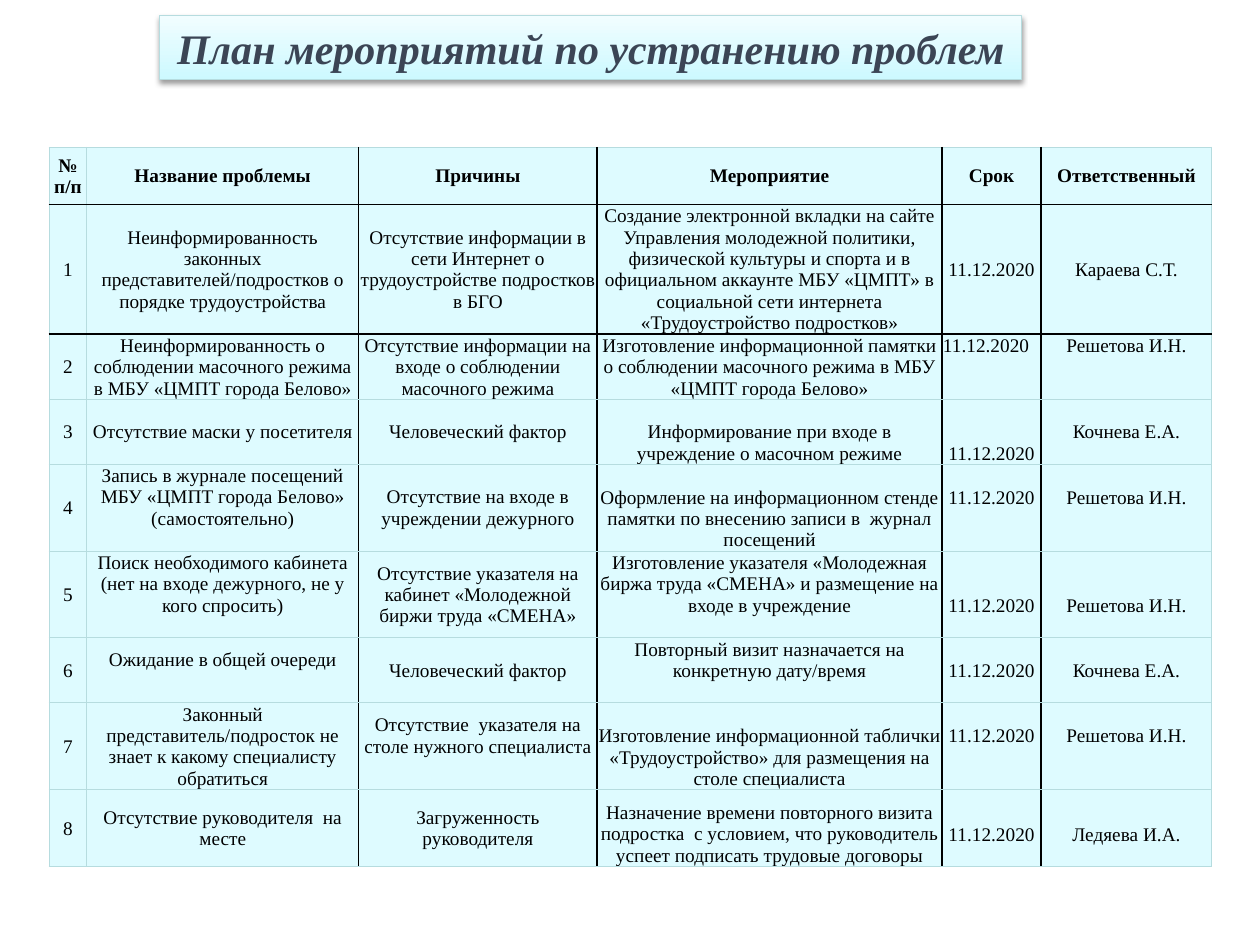
import pptx
import pptx.dml.color
import pptx.enum.shapes
import pptx.enum.text
import pptx.oxml
import pptx.oxml.ns
import pptx.util

Cm = pptx.util.Cm
Pt = pptx.util.Pt

# Content: a cell is text, or (text, anchor, free lines below)
TITLE = "План мероприятий по устранению проблем"
HEADER = ["№ п/п", "Название проблемы", "Причины", "Мероприятие", "Срок", "Ответственный"]
DATE = "11.12.2020"
RESHETOVA, KOCHNEVA = "Решетова И.Н.", "Кочнева Е.А."
PROBLEMS = [
    ["Неинформированность законных представителей/подростков о порядке трудоустройства",
     "Отсутствие информации в сети Интернет о трудоустройстве подростков в БГО",
     "Создание электронной вкладки на сайте Управления молодежной политики, физической культуры "
     "и спорта и в официальном аккаунте МБУ «ЦМПТ» в социальной сети интернета "
     "«Трудоустройство подростков»",
     DATE, "Караева С.Т."],
    ["Неинформированность о соблюдении масочного режима в МБУ «ЦМПТ города Белово»",
     "Отсутствие информации на входе о соблюдении масочного режима",
     "Изготовление информационной памятки о соблюдении масочного режима в МБУ «ЦМПТ города Белово»",
     (DATE, "top", 0), (RESHETOVA, "top", 0)],
    ["Отсутствие маски у посетителя", "Человеческий фактор",
     ("Информирование при входе в учреждение о масочном режиме", "bottom", 0),
     (DATE, "bottom", 0), KOCHNEVA],
    [("Запись в журнале посещений МБУ «ЦМПТ города Белово» (самостоятельно)", "top", 0),
     "Отсутствие на входе в учреждении дежурного",
     ("Оформление на информационном стенде памятки по внесению записи в  журнал посещений",
      "bottom", 0),
     (DATE, "bottom", 2), (RESHETOVA, "bottom", 2)],
    [("Поиск необходимого кабинета (нет на входе дежурного, не у кого спросить)", "top", 0),
     "Отсутствие указателя на кабинет «Молодежной биржи труда «СМЕНА»",
     ("Изготовление указателя «Молодежная биржа труда «СМЕНА» и размещение на входе в учреждение",
      "top", 0),
     (DATE, "bottom", 1), (RESHETOVA, "bottom", 1)],
    [("Ожидание в общей очереди", "middle", 1), "Человеческий фактор",
     ("Повторный визит назначается на конкретную дату/время", "top", 0),
     DATE, KOCHNEVA],
    ["Законный представитель/подросток не знает к какому специалисту обратиться",
     ("Отсутствие  указателя на столе нужного специалиста", "middle", 1),
     ("Изготовление информационной таблички «Трудоустройство» для размещения на столе специалиста",
      "bottom", 0),
     (DATE, "bottom", 2), (RESHETOVA, "bottom", 2)],
    ["Отсутствие руководителя  на месте", "Загруженность руководителя",
     ("Назначение времени повторного визита подростка  с условием, что руководитель успеет "
      "подписать трудовые договоры", "bottom", 0),
     (DATE, "bottom", 1), ("Ледяева И.А.", "bottom", 1)],
]

THEME = {
    "font": "Times New Roman", "title_size": 24, "table_size": 11,
    "title": "3B4555", "text": "000000", "rule": "000000", "edge": "B6DCDF",
    "cell": "DEFBFF", "title_top": "F1FDFF", "title_bottom": "CDF9FF",
}

# Geometry in centimetres
TABLE_LEFT, TABLE_TOP = 0.99, 2.97
COLUMN_WIDTHS = [0.76, 5.48, 4.81, 6.95, 2, 3.44]
ROW_HEIGHTS = [1.15, 2.6, 1.31, 1.31, 1.75, 1.75, 1.31, 1.75, 1.55]
INSET, LINE_HEIGHT = 0.02, 0.43
ANCHORS = {
    "top": pptx.enum.text.MSO_ANCHOR.TOP,
    "middle": pptx.enum.text.MSO_ANCHOR.MIDDLE,
    "bottom": pptx.enum.text.MSO_ANCHOR.BOTTOM,
}
NAMESPACE = pptx.oxml.ns.nsdecls("a")


def color(name):
    return pptx.dml.color.RGBColor.from_string(THEME[name])


def write_text(frame, text, size, color_name="text", bold=False, italic=False,
               align=pptx.enum.text.PP_ALIGN.CENTER):
    paragraph = frame.paragraphs[0]
    paragraph.alignment = align
    run = paragraph.add_run()
    run.text = text
    run.font.name = THEME["font"]
    run.font.size = Pt(size)
    run.font.bold = bold
    run.font.italic = italic
    run.font.color.rgb = color(color_name)


def set_borders(cell, **sides):
    properties = cell._tc.get_or_add_tcPr()
    for index, side in enumerate("LRTB"):
        name = sides[side]
        width = Pt(1 if name == "rule" else 0.75)
        properties.insert(index, pptx.oxml.parse_xml(
            f'<a:ln{side} {NAMESPACE} w="{width}"><a:solidFill>'
            f'<a:srgbClr val="{THEME[name]}"/></a:solidFill></a:ln{side}>'))


def add_title(slide):
    shape = slide.shapes.add_shape(pptx.enum.shapes.MSO_SHAPE.RECTANGLE,
                                   Cm(3.22), Cm(0.32), Cm(17.38), Cm(1.28))
    shape.fill.gradient()
    shape.fill.gradient_angle = 270
    for stop, name in zip(shape.fill.gradient_stops, ("title_top", "title_bottom")):
        stop.color.rgb = color(name)
    shape.line.color.rgb = color("edge")
    shape.line.width = Pt(0.75)
    # Soft shadow straight below
    shape._element.spPr.append(pptx.oxml.parse_xml(
        f'<a:effectLst {NAMESPACE}><a:outerShdw blurRad="{Pt(3.1)}" dist="{Pt(1.6)}" '
        'dir="5400000" rotWithShape="0"><a:srgbClr val="000000"><a:alpha val="38000"/>'
        '</a:srgbClr></a:outerShdw></a:effectLst>'))
    shape.text_frame.word_wrap = False
    shape.text_frame.vertical_anchor = ANCHORS["middle"]
    write_text(shape.text_frame, TITLE, THEME["title_size"], "title", bold=True, italic=True)


def add_plan(slide):
    rows = [HEADER] + [[str(number), *problem] for number, problem in enumerate(PROBLEMS, 1)]
    frame = slide.shapes.add_table(len(rows), len(HEADER), Cm(TABLE_LEFT), Cm(TABLE_TOP),
                                   Cm(sum(COLUMN_WIDTHS)), Cm(sum(ROW_HEIGHTS)))
    table = frame.table
    for column, width in zip(table.columns, COLUMN_WIDTHS):
        column.width = Cm(width)
    for row, height in zip(table.rows, ROW_HEIGHTS):
        row.height = Cm(height)

    # Dark rules: between columns after the second, and below the first two rows
    vertical = ["edge"] * 2 + ["rule"] * 4 + ["edge"]
    horizontal = ["edge"] + ["rule"] * 2 + ["edge"] * 7
    for r, values in enumerate(rows):
        for c, value in enumerate(values):
            text, anchor, free_lines = (value, "middle", 0) if isinstance(value, str) else value
            cell = table.cell(r, c)
            cell.fill.solid()
            cell.fill.fore_color.rgb = color("cell")
            cell.margin_left = cell.margin_right = cell.margin_top = Cm(INSET)
            cell.margin_bottom = Cm(free_lines * LINE_HEIGHT)
            cell.vertical_anchor = ANCHORS[anchor]
            left_date = text == DATE and anchor == "top"
            align = pptx.enum.text.PP_ALIGN.LEFT if left_date else pptx.enum.text.PP_ALIGN.CENTER
            write_text(cell.text_frame, text, THEME["table_size"], bold=r == 0, align=align)
            set_borders(cell, L=vertical[c], R=vertical[c + 1],
                        T=horizontal[r], B=horizontal[r + 1])


def main():
    presentation = pptx.Presentation()
    presentation.slide_width, presentation.slide_height = Cm(25.4), Cm(19.05)
    slide = presentation.slides.add_slide(presentation.slide_layouts[6])
    add_title(slide)
    add_plan(slide)
    presentation.save("out.pptx")


if __name__ == "__main__":
    main()
